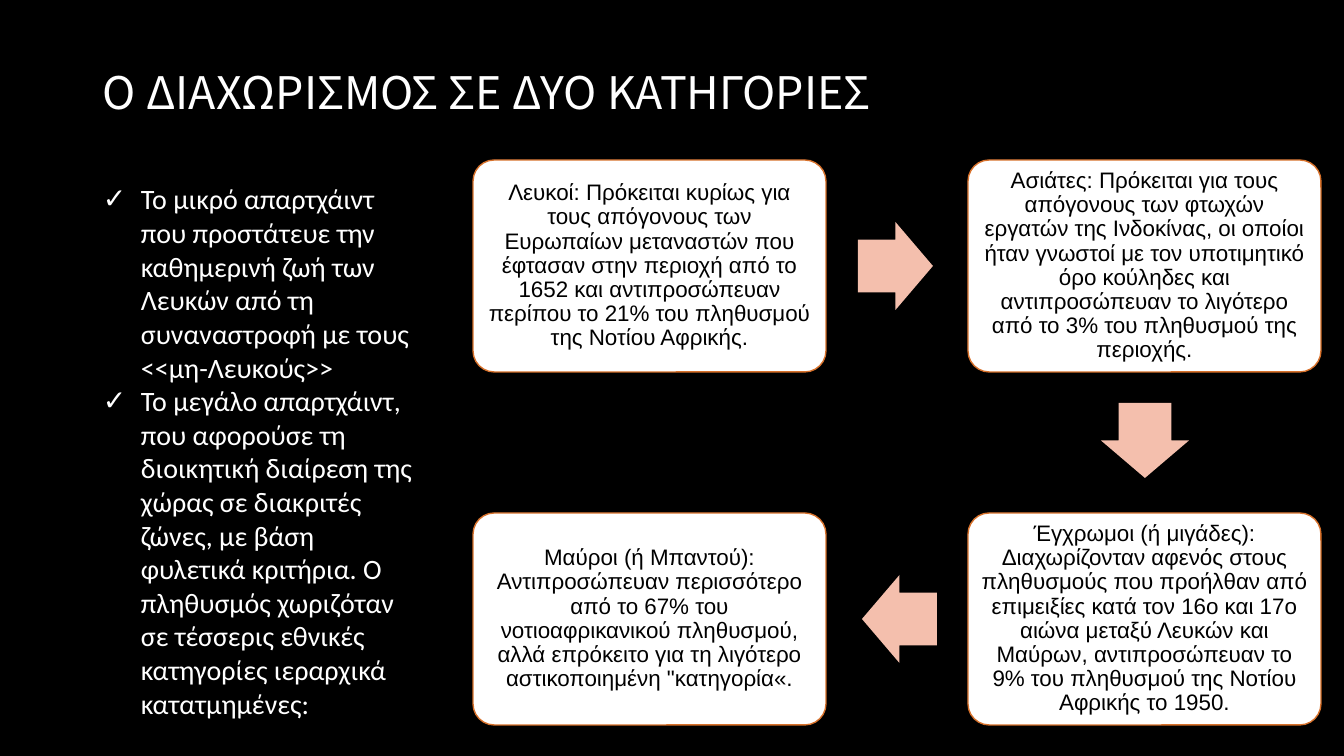
"""Build the slide on the division into categories."""
from lxml import etree
from pptx import Presentation
from pptx import util as u
from pptx.dml.color import RGBColor
from pptx.enum import shapes, text
from pptx.oxml import ns

BLACK = RGBColor(0x00, 0x00, 0x00)
WHITE = RGBColor(0xFF, 0xFF, 0xFF)
RUST = RGBColor(0xD7, 0x71, 0x2B)
PEACH = RGBColor(0xF4, 0xBF, 0xAD)
KIND = shapes.MSO_SHAPE
MID = text.MSO_ANCHOR.MIDDLE


def px(*nums):
    return [u.Emu(round(n * 914400 / 100.8)) for n in nums]


def style(para, face, size, color):
    for run in para.runs:
        run.font.name = face
        run.font.size = u.Pt(size)
        run.font.color.rgb = color


deck = Presentation()
deck.slide_width, deck.slide_height = px(1344, 756)
slide = deck.slides.add_slide(deck.slide_layouts[6])
slide.background.fill.solid()
slide.background.fill.fore_color.rgb = BLACK

title = slide.shapes.add_textbox(*px(93, 40, 1155, 109)).text_frame
title.word_wrap = True
title.vertical_anchor = MID
title.text = "Ο ΔΙΑΧΩΡΙΣΜΟΣ ΣΕ ΔΥΟ ΚΑΤΗΓΟΡΙΕΣ"
title.paragraphs[0].line_spacing = 0.9
style(title.paragraphs[0], "Noto Sans CJK JP", 32, WHITE)

points = [
    "Το μικρό απαρτχάιντ που προστάτευε την καθημερινή ζωή των Λευκών "
    "από τη συναναστροφή με τους <<μη-Λευκούς>>",
    "Το μεγάλο απαρτχάιντ, που αφορούσε τη διοικητική διαίρεση της χώρας "
    "σε διακριτές ζώνες, με βάση φυλετικά κριτήρια. Ο πληθυσμός χωριζόταν "
    "σε τέσσερις εθνικές κατηγορίες ιεραρχικά κατατμημένες:",
]
body = slide.shapes.add_textbox(*px(93, 177, 340, 587)).text_frame
body.word_wrap = True
body.auto_size = text.MSO_AUTO_SIZE.SHAPE_TO_FIT_TEXT
body.text = "\n".join(points)
dent = px(38)[0]
for para in body.paragraphs:
    style(para, "Calibri", 20, WHITE)
    props = para._p.get_or_add_pPr()
    props.set("marL", str(dent))
    props.set("indent", str(-dent))
    etree.SubElement(props, ns.qn("a:buFont")).set("typeface", "Arial")
    etree.SubElement(props, ns.qn("a:buChar")).set("char", "✓")

WEST, EAST, NORTH, SOUTH = 473, 968, 160, 513
groups = [
    (WEST, NORTH,
     "Λευκοί: Πρόκειται κυρίως για τους απόγονους των Ευρωπαίων "
     "μεταναστών που έφτασαν στην περιοχή από το 1652 και "
     "αντιπροσώπευαν περίπου το 21% του πληθυσμού της Νοτίου Αφρικής."),
    (EAST, NORTH,
     "Ασιάτες: Πρόκειται για τους απόγονους των φτωχών εργατών "
     "της Ινδοκίνας, οι οποίοι ήταν γνωστοί με τον υποτιμητικό "
     "όρο κούληδες και αντιπροσώπευαν το λιγότερο από το 3% του "
     "πληθυσμού της περιοχής."),
    (EAST, SOUTH,
     "Έγχρωμοι (ή μιγάδες): Διαχωρίζονταν αφενός στους πληθυσμούς που "
     "προήλθαν από επιμειξίες κατά τον 16ο και 17ο αιώνα μεταξύ Λευκών "
     "και Μαύρων, αντιπροσώπευαν το 9% του πληθυσμού της Νοτίου Αφρικής "
     "το 1950."),
    (WEST, SOUTH,
     "Μαύροι (ή Μπαντού): Αντιπροσώπευαν περισσότερο από το 67% του "
     "νοτιοαφρικανικού πληθυσμού, αλλά επρόκειτο για τη "
     "λιγότερο αστικοποιημένη \"κατηγορία«."),
]
for left, top, words in groups:
    box = slide.shapes.add_shape(KIND.ROUNDED_RECTANGLE, *px(left, top, 353, 212))
    box.adjustments[0] = 0.1
    box.shadow.inherit = False
    box.fill.solid()
    box.fill.fore_color.rgb = WHITE
    box.line.color.rgb = RUST
    box.line.width = u.Pt(1)
    frame = box.text_frame
    frame.word_wrap = True
    frame.vertical_anchor = MID
    frame.margin_left, frame.margin_right = px(7, 7)
    frame.margin_top, frame.margin_bottom = px(7, 7)
    frame.text = words
    para = frame.paragraphs[0]
    para.alignment = text.PP_ALIGN.CENTER
    para.line_spacing = 0.9
    para.space_after = u.Pt(7)
    style(para, "Arial", 16, BLACK)

arrows = [
    (KIND.RIGHT_ARROW, 858, 222, 75, 88),
    (KIND.DOWN_ARROW, 1101, 403, 88, 75),
    (KIND.LEFT_ARROW, 862, 575, 75, 88),
]
for kind, *place in arrows:
    arrow = slide.shapes.add_shape(kind, *px(*place))
    arrow.adjustments[0] = 0.6
    arrow.adjustments[1] = 0.5
    arrow.shadow.inherit = False
    arrow.fill.solid()
    arrow.fill.fore_color.rgb = PEACH
    arrow.line.fill.background()

deck.save("out.pptx")
